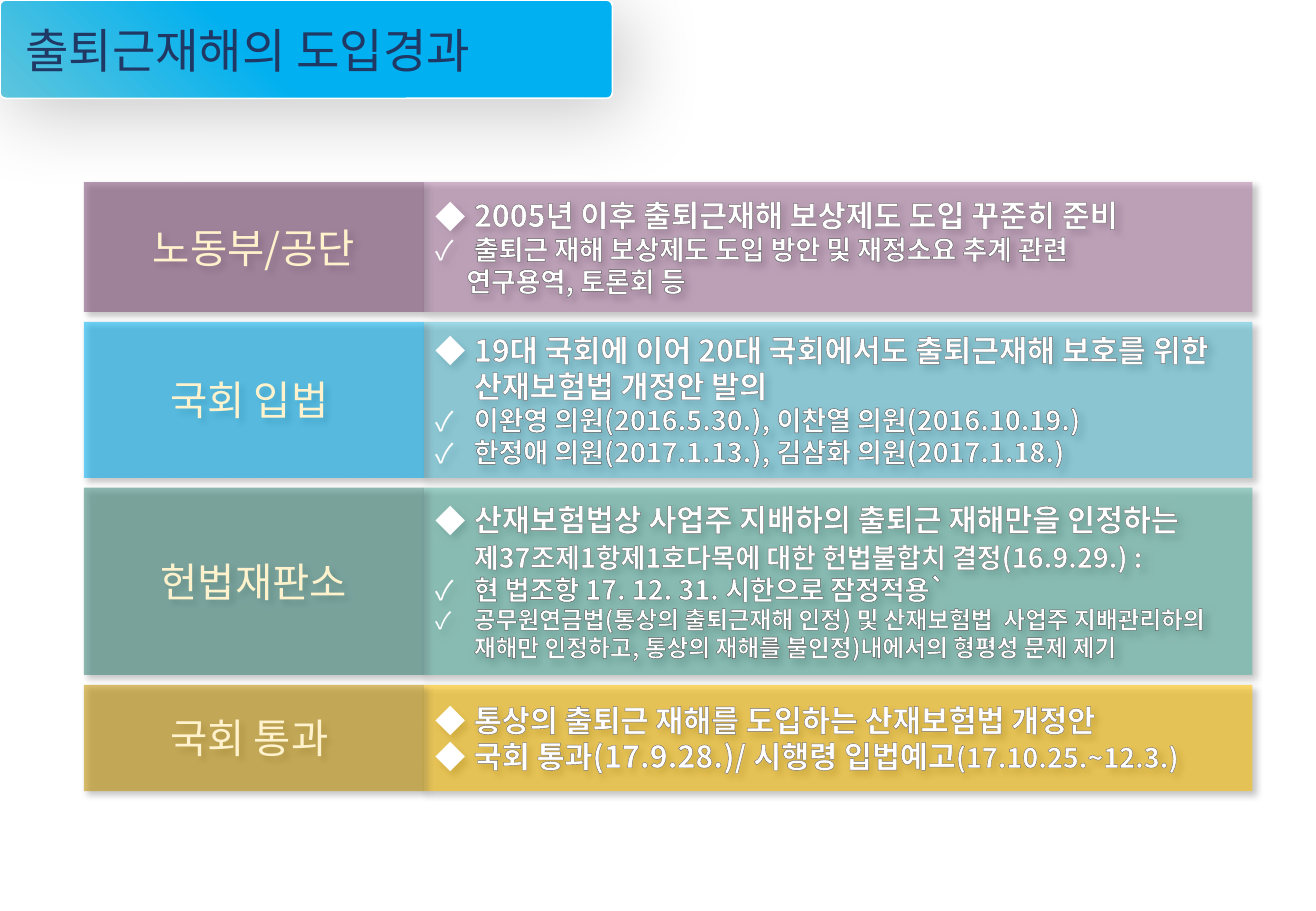
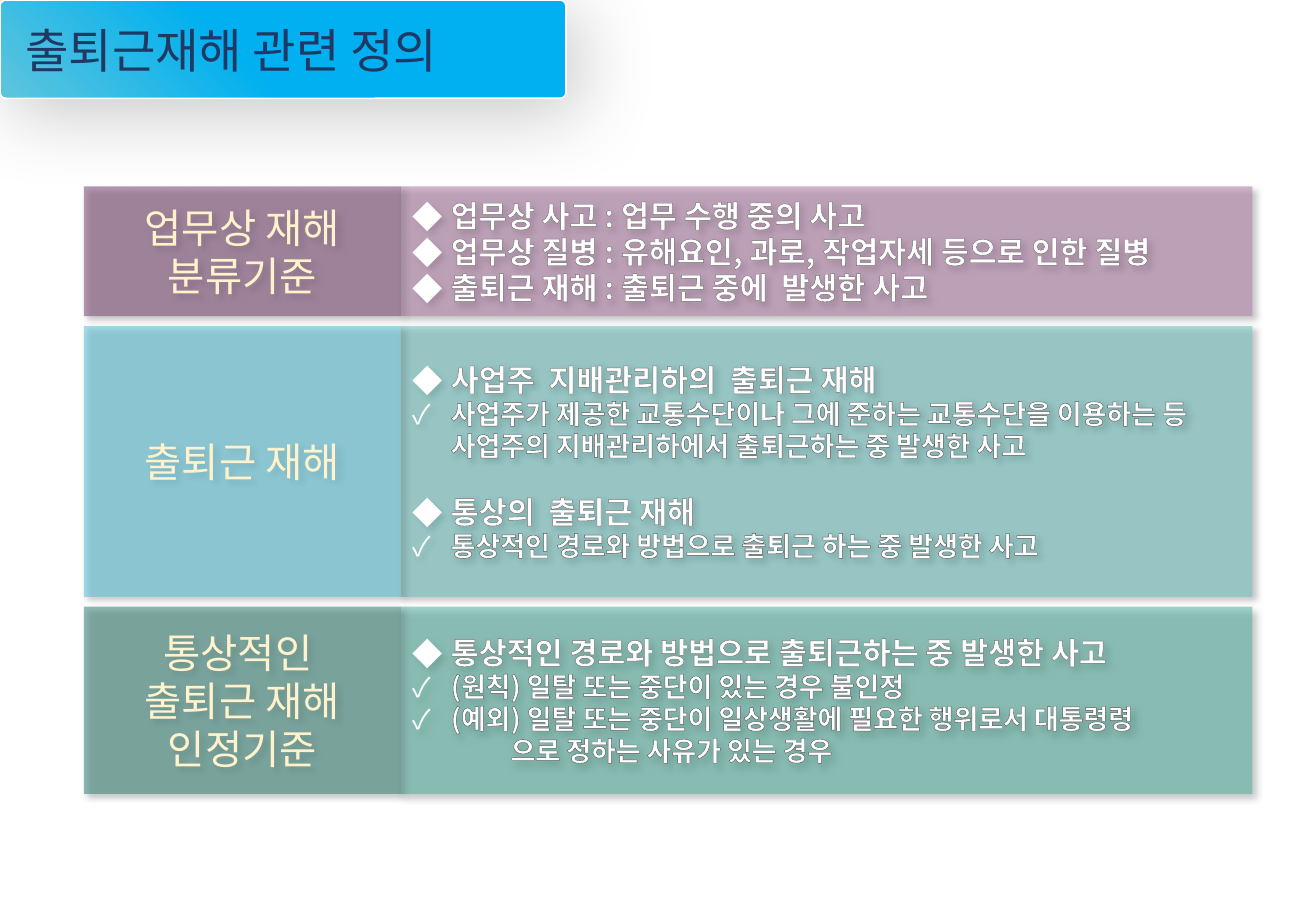
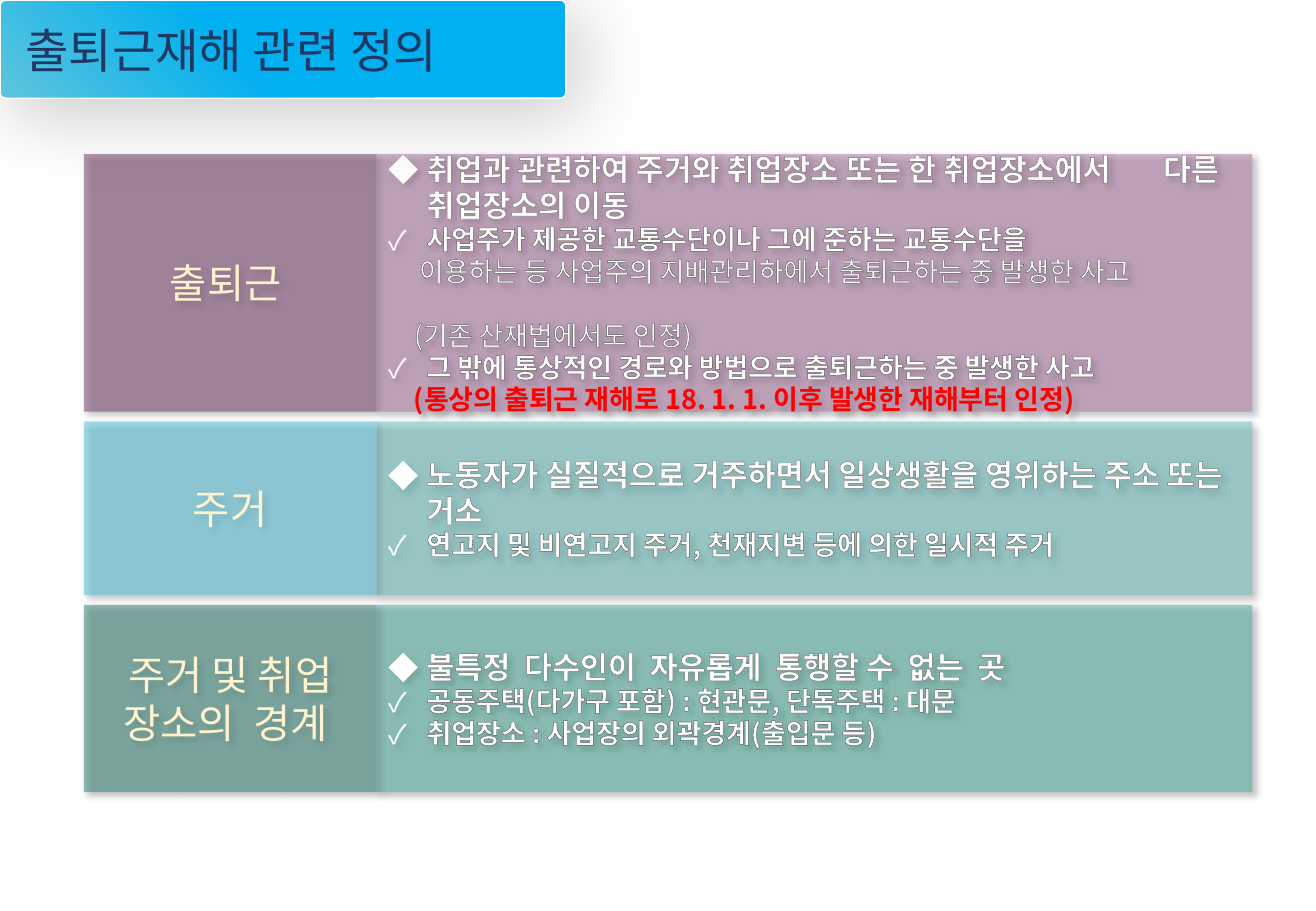
import pptx
import pptx.util
import pptx.dml.color
import pptx.enum.shapes
import pptx.enum.text
import pptx.oxml.ns
from lxml import etree

Pt = pptx.util.Pt
FONT = "Noto Sans CJK KR"
SHAPES = pptx.enum.shapes.MSO_SHAPE
ALIGN = pptx.enum.text.PP_ALIGN

COLORS = {
    "mauve": "B383AB", "plum": "7E4D76", "aqua": "5FC5DC", "sky": "00B0F0",
    "mint": "74C5C3", "green": "59B3A4", "pine": "3D877B",
    "gold": "FFC000", "ochre": "BF9000",
    "white": "FFFFFF", "cream": "FFF2CC", "navy": "203864", "red": "FF0000",
    "black": "000000", "point_edge": "767171", "detail_edge": "595959",
    "label_edge": "808080",
}
LEFT, RIGHT, ROW_GAP = 49.7, 742.3, 5.8
TITLE_HEIGHT = 58.3
LINE_SPACING = 1.185
HANGING = 22.5
OPACITY = 56
ROW_SHADOW = (40, 4, 3, 45)
TITLE_SHADOW = (22, 48, 10, 50)
STYLES = {
    "◆": {"size": 18, "edge": "point_edge"},
    "✓": {"size": 16, "edge": "detail_edge"},
    "": {"size": 16, "edge": "detail_edge", "left": 18},
}

SLIDES = [
    {
        "title": "출퇴근재해의 도입경과", "title_width": 363, "top": 108, "split": 251.3,
        "rows": [
            (77, "plum", "mauve", ["노동부/공단"], [
                ("◆", "2005년 이후 출퇴근재해 보상제도 도입 꾸준히 준비"),
                ("✓", "출퇴근 재해 보상제도 도입 방안 및 재정소요 추계 관련"),
                ("", "연구용역, 토론회 등"),
            ]),
            (92.5, "sky", "aqua", ["국회 입법 "], [
                ("◆", "19대 국회에 이어 20대 국회에서도 출퇴근재해 보호를 위한 산재보험법 개정안 발의"),
                ("✓", "이완영 의원(2016.5.30.), 이찬열 의원(2016.10.19.)"),
                ("✓", "한정애 의원(2017.1.13.), 김삼화 의원(2017.1.18.)"),
            ]),
            (111, "pine", "green", ["헌법재판소"], [
                ("◆", "산재보험법상 사업주 지배하의 출퇴근 재해만을 인정하는\v",
                 {"tail": "제37조제1항제1호다목에 대한 헌법불합치 결정(16.9.29.) :"}),
                ("✓", "현 법조항 17. 12. 31. 시한으로 잠정적용`"),
                ("✓", "공무원연금법(통상의 출퇴근재해 인정) 및 산재보험법  사업주 지배관리하의 "
                      "재해만 인정하고, 통상의 재해를 불인정)내에서의 형평성 문제 제기", {"size": 14}),
            ]),
            (63, "ochre", "gold", ["국회 통과 "], [
                ("◆", "통상의 출퇴근 재해를 도입하는 산재보험법 개정안"),
                ("◆", "국회 통과(17.9.28.)/ 시행령 입법예고", {"tail": "(17.10.25.~12.3.)"}),
            ]),
        ],
    },
    {
        "title": "출퇴근재해 관련 정의", "title_width": 335.5, "top": 110.5, "split": 237.6,
        "rows": [
            (77, "plum", "mauve", ["업무상 재해", "분류기준"], [
                ("◆", "업무상 사고 : 업무 수행 중의 사고"),
                ("◆", "업무상 질병 : 유해요인, 과로, 작업자세 등으로 인한 질병"),
                ("◆", "출퇴근 재해 : 출퇴근 중에  발생한 사고"),
            ]),
            (160.5, "aqua", "mint", ["출퇴근 재해"], [
                ("◆", "사업주  지배관리하의  출퇴근 재해"),
                ("✓", "사업주가 제공한 교통수단이나 그에 준하는 교통수단을 이용하는 등 "
                      "사업주의 지배관리하에서 출퇴근하는 중 발생한 사고"),
                ("◆", "통상의  출퇴근 재해", {"before": 19}),
                ("✓", "통상적인 경로와 방법으로 출퇴근 하는 중 발생한 사고"),
            ]),
            (111, "pine", "green", ["통상적인 ", "출퇴근 재해", "인정기준"], [
                ("◆", "통상적인 경로와 방법으로 출퇴근하는 중 발생한 사고"),
                ("✓", "(원칙) 일탈 또는 중단이 있는 경우 불인정"),
                ("✓", "(예외) 일탈 또는 중단이 일상생활에 필요한 행위로서 대통령령"),
                ("", "으로 정하는 사유가 있는 경우", {"left": 58}),
            ]),
        ],
    },
    {
        "title": "출퇴근재해 관련 정의", "title_width": 335.5, "top": 91.4, "split": 223.2,
        "rows": [
            (152.6, "plum", "mauve", ["출퇴근 "], [
                ("◆", "취업과 관련하여 주거와 취업장소 또는 한 취업장소에서\t다른 취업장소의 이동",
                 {"tab": 459}),
                ("✓", "사업주가 제공한 교통수단이나 그에 준하는 교통수단을"),
                ("", "이용하는 등 사업주의 지배관리하에서 출퇴근하는 중 발생한 사고", {"bold": False}),
                ("", "(기존 산재법에서도 인정)", {"bold": False, "left": 15, "before": 19}),
                ("✓", "그 밖에 통상적인 경로와 방법으로 출퇴근하는 중 발생한 사고"),
                ("", "(통상의 출퇴근 재해로 18. 1. 1. 이후 발생한 재해부터 인정)",
                 {"left": 15, "color": "red"}),
            ]),
            (103, "aqua", "mint", ["주거"], [
                ("◆", "노동자가 실질적으로 거주하면서 일상생활을 영위하는 주소 또는 거소"),
                ("✓", "연고지 및 비연고지 주거, 천재지변 등에 의한 일시적 주거"),
            ]),
            (111, "pine", "green", ["주거 및 취업", "장소의  경계 "], [
                ("◆", "불특정  다수인이  자유롭게  통행할 수  없는  곳"),
                ("✓", "공동주택(다가구 포함) : 현관문, 단독주택 : 대문"),
                ("✓", "취업장소 : 사업장의 외곽경계(출입문 등)"),
            ]),
        ],
    },
]


def rgb(name):
    return pptx.dml.color.RGBColor.from_string(COLORS[name])


def add_element(parent, tag, **attributes):
    element = etree.SubElement(parent, pptx.oxml.ns.qn(tag))
    for key, value in attributes.items():
        element.set(key, str(value))
    return element


def add_shadow(shape, opacity, blur, distance, angle):
    shape.shadow.inherit = False
    effects = shape._element.spPr.find(pptx.oxml.ns.qn("a:effectLst"))
    shadow = add_element(effects, "a:outerShdw", blurRad=int(Pt(blur)), dist=int(Pt(distance)),
                         dir=angle * 60000, algn="tl", rotWithShape=0)
    color = add_element(shadow, "a:srgbClr", val=COLORS["black"])
    add_element(color, "a:alpha", val=opacity * 1000)


def add_panel(slide, left, top, width, height, color):
    panel = slide.shapes.add_shape(SHAPES.RECTANGLE, Pt(left), Pt(top), Pt(width), Pt(height))
    panel.fill.solid()
    panel.fill.fore_color.rgb = rgb(color)
    fill = panel._element.spPr.find(pptx.oxml.ns.qn("a:solidFill"))
    add_element(fill[0], "a:alpha", val=OPACITY * 1000)
    panel.line.fill.background()
    add_shadow(panel, *ROW_SHADOW)
    panel.text_frame.word_wrap = True
    panel.text_frame.vertical_anchor = pptx.enum.text.MSO_ANCHOR.MIDDLE
    return panel


def format_run(run, size, color, bold=False, edge=None, edge_width=0.75):
    run.font.size = Pt(size)
    run.font.name = FONT
    run.font.bold = bold
    run.font.color.rgb = rgb(color)
    properties = run.font._element
    add_element(properties, "a:ea", typeface=FONT)
    if edge:
        line = add_element(properties, "a:ln", w=int(Pt(edge_width)))
        add_element(add_element(line, "a:solidFill"), "a:srgbClr", val=COLORS[edge])
        properties.insert(0, line)


def paragraphs_for(frame, items):
    frame.text = "\n".join([""] * len(items))
    return zip(frame.paragraphs, items)


def fill_label(frame, lines):
    for paragraph, text in paragraphs_for(frame, lines):
        paragraph.text = text
        paragraph.alignment = ALIGN.CENTER
        paragraph.line_spacing = Pt(24 * LINE_SPACING)
        format_run(paragraph.runs[0], 24, "cream", edge="label_edge", edge_width=0.25)


def fill_details(frame, items):
    for paragraph, (mark, text, *extra) in paragraphs_for(frame, items):
        style = {**STYLES[mark], **(extra[0] if extra else {})}
        paragraph.text = text
        paragraph.alignment = ALIGN.LEFT
        paragraph.line_spacing = Pt(round(style["size"] * LINE_SPACING, 1))
        if "before" in style:
            paragraph.space_before = Pt(style["before"])
        properties = paragraph._p.get_or_add_pPr()
        properties.set("marL", str(int(Pt(HANGING if mark else style["left"]))))
        properties.set("indent", str(int(Pt(-HANGING if mark else 0))))
        if mark:
            add_element(properties, "a:buFont", typeface=FONT)
            add_element(properties, "a:buChar", char=mark)
        if "tab" in style:
            tabs = add_element(properties, "a:tabLst")
            add_element(tabs, "a:tab", pos=int(Pt(style["tab"])), algn="l")
        for run in paragraph.runs:
            format_run(run, style["size"], style.get("color", "white"),
                       style.get("bold", True), style["edge"])
        if "tail" in style:
            tail = paragraph.add_run()
            tail.text = style["tail"]
            format_run(tail, 16, "white", True, style["edge"])


def add_title(slide, text, width):
    title = slide.shapes.add_shape(SHAPES.ROUNDED_RECTANGLE, 0, 0, Pt(width), Pt(TITLE_HEIGHT))
    title.adjustments[0] = 0.06
    title.fill.gradient()
    title.fill.gradient_angle = 45
    for stop, position, color in zip(title.fill.gradient_stops, (0, 0.43), ("aqua", "sky")):
        stop.position = position
        stop.color.rgb = rgb(color)
    title.line.color.rgb = rgb("white")
    title.line.width = Pt(1)
    add_shadow(title, *TITLE_SHADOW)
    frame = title.text_frame
    frame.word_wrap = True
    frame.margin_left = Pt(14)
    frame.vertical_anchor = pptx.enum.text.MSO_ANCHOR.MIDDLE
    frame.text = text
    frame.paragraphs[0].alignment = ALIGN.LEFT
    format_run(frame.paragraphs[0].runs[0], 28, "navy")


def build_slide(presentation, content):
    slide = presentation.slides.add_slide(presentation.slide_layouts[6])
    split, top = content["split"], content["top"]
    for height, label_color, detail_color, label, details in content["rows"]:
        detail_panel = add_panel(slide, split, top, RIGHT - split, height, detail_color)
        fill_details(detail_panel.text_frame, details)
        label_panel = add_panel(slide, LEFT, top, split - LEFT, height, label_color)
        fill_label(label_panel.text_frame, label)
        top += height + ROW_GAP
    add_title(slide, content["title"], content["title_width"])


def main():
    presentation = pptx.Presentation()
    presentation.slide_width = Pt(780)
    presentation.slide_height = Pt(540)
    for content in SLIDES:
        build_slide(presentation, content)
    presentation.save("out.pptx")


if __name__ == "__main__":
    main()
